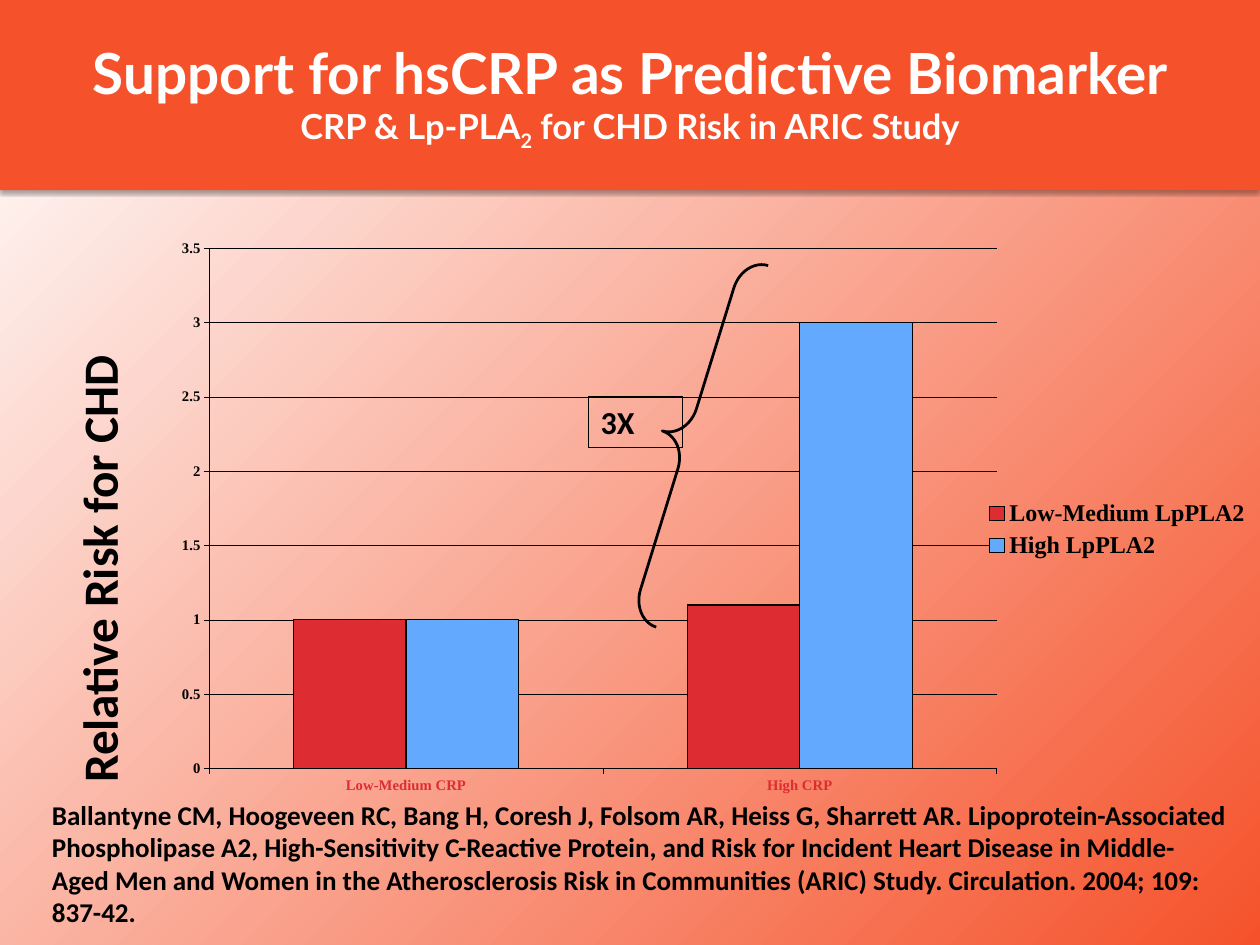
"""Build a slide on relative CHD risk by CRP and Lp-PLA2 level."""
from dataclasses import dataclass

from lxml import etree
from pptx import Presentation
from pptx.chart.data import CategoryChartData
from pptx.dml.color import RGBColor
from pptx.enum.chart import XL_CHART_TYPE as ChartType
from pptx.enum.chart import XL_LEGEND_POSITION as LegendPosition
from pptx.enum.chart import XL_TICK_LABEL_POSITION as LabelPosition
from pptx.enum.chart import XL_TICK_MARK as TickMark
from pptx.enum.shapes import MSO_SHAPE as Preset
from pptx.enum.text import MSO_ANCHOR as Anchor
from pptx.enum.text import MSO_AUTO_SIZE as AutoSize
from pptx.enum.text import PP_ALIGN as Align
from pptx.oxml import parse_xml
from pptx.oxml.ns import nsdecls, qn
from pptx.slide import Slide
from pptx.util import Cm, Pt

ORANGE = RGBColor(0xF5, 0x52, 0x2B)
RED = RGBColor(0xDD, 0x2D, 0x32)
BLUE = RGBColor(0x63, 0xAA, 0xFE)
BLACK = RGBColor(0, 0, 0)
WHITE = RGBColor(0xFF, 0xFF, 0xFF)

WIDTH, HEIGHT = 36.12, 27.09


@dataclass
class Box:
    left: float
    top: float
    width: float
    height: float

    def lengths(self) -> tuple:
        return tuple(Cm(v) for v in (self.left, self.top, self.width, self.height))


@dataclass
class Label:
    text: str
    box: Box
    size: float
    insets: tuple[float, float] = (0.36, 0.18)
    rotation: float = 0
    outline: float = 0


@dataclass
class RiskSeries:
    name: str
    values: tuple[float, ...]
    color: RGBColor


TITLE_BOX = Box(0, 0, WIDTH, 5.45)
CHART_BOX = Box(0, 5.71, WIDTH, 18.94)
BRACE_BOX = Box(18.95, 7.15, 1.5, 10.85)
TITLE_LINES = (
    (("Support for hsCRP as Predictive Biomarker", 46, False),),
    (("CRP & Lp-PLA", 28, False), ("2", 28, True), (" for CHD Risk in ARIC Study", 28, False)),
)
CATEGORIES = ("Low-Medium CRP", "High CRP")
SERIES = (
    RiskSeries("Low-Medium LpPLA2", (1, 1.1), RED),
    RiskSeries("High LpPLA2", (1, 3), BLUE),
)
PLOT_LAYOUT = {"x": 0.166, "y": 0.074, "w": 0.625, "h": 0.788}
AXIS_LABEL = Label("Relative Risk for CHD", Box(-4.55, 14.38, 14.76, 2.08), 40, rotation=270)
RATIO = Label("3X", Box(16.86, 11.37, 2.7, 1.46), 26, outline=0.75)
CITATION = Label(
    "Ballantyne CM, Hoogeveen RC, Bang H, Coresh J, Folsom AR, Heiss G, Sharrett AR. "
    "Lipoprotein-Associated Phospholipase A2, High-Sensitivity C-Reactive Protein, and Risk "
    "for Incident Heart Disease in Middle-Aged Men and Women in the Atherosclerosis Risk in "
    "Communities (ARIC) Study. Circulation. 2004; 109: 837-42.",
    Box(1.24, 22.75, 34.24, 4.01), 22, insets=(0.25, 0.13),
)


def apply(target, formats: dict) -> None:
    for name, value in formats.items():
        setattr(target, name, value)


def set_font(font, name: str, size: float, color: RGBColor) -> None:
    apply(font, {"name": name, "size": Pt(size), "bold": True})
    font.color.rgb = color


def set_line(line, width: float) -> None:
    line.color.rgb = BLACK
    line.width = Pt(width)


def paint_background(slide: Slide) -> None:
    fill = slide.background.fill
    fill.gradient()
    for stop, color, position in zip(fill.gradient_stops, (WHITE, ORANGE), (0, 1)):
        stop.color.rgb = color
        stop.position = position
    gradient = slide.element.find(".//" + qn("a:gradFill"))
    white = gradient.find(".//" + qn("a:srgbClr"))
    etree.SubElement(white, qn("a:alpha"), val="39000")
    gradient.remove(gradient.find(qn("a:lin")))
    circle = etree.SubElement(gradient, qn("a:path"), path="circle")
    etree.SubElement(circle, qn("a:fillToRect"), r="100000", b="100000")


def fill_title(slide: Slide) -> None:
    title = slide.shapes.title
    apply(title, dict(zip(("left", "top", "width", "height"), TITLE_BOX.lengths())))
    title.fill.solid()
    title.fill.fore_color.rgb = ORANGE
    title.element.spPr.append(parse_xml(
        f'<a:effectLst {nsdecls("a")}><a:outerShdw blurRad="39370" dist="22860" '
        'dir="5400000" rotWithShape="0"><a:srgbClr val="000000">'
        '<a:alpha val="35000"/></a:srgbClr></a:outerShdw></a:effectLst>'))
    frame = title.text_frame
    apply(frame, {"word_wrap": True, "auto_size": AutoSize.NONE,
                  "vertical_anchor": Anchor.MIDDLE})
    paragraph = frame.paragraphs[0]
    paragraph.alignment = Align.CENTER
    for index, line in enumerate(TITLE_LINES):
        if index:
            paragraph.add_line_break()
        for text, size, lowered in line:
            run = paragraph.add_run()
            run.text = text
            set_font(run.font, "Lato", size, WHITE)
            if lowered:
                run.font._element.set("baseline", "-25000")


def add_risk_chart(slide: Slide) -> None:
    data = CategoryChartData()
    data.categories = CATEGORIES
    for series in SERIES:
        data.add_series(series.name, series.values)
    chart = slide.shapes.add_chart(
        ChartType.COLUMN_CLUSTERED, *CHART_BOX.lengths(), data).chart
    apply(chart, {"has_title": False, "has_legend": True})
    set_font(chart.font, "Times New Roman", 11.1, BLACK)
    apply(chart.legend, {"position": LegendPosition.RIGHT, "include_in_layout": False})
    set_font(chart.legend.font, "Times New Roman", 19.5, BLACK)

    for axis, color in ((chart.category_axis, RED), (chart.value_axis, BLACK)):
        apply(axis, {"major_tick_mark": TickMark.OUTSIDE, "minor_tick_mark": TickMark.NONE})
        set_font(axis.tick_labels.font, "Times New Roman", 11.9, color)
        set_line(axis.format.line, 0.25)
    chart.category_axis.tick_label_position = LabelPosition.LOW
    apply(chart.value_axis, {"minimum_scale": 0, "maximum_scale": 3.5, "major_unit": 0.5,
                             "has_major_gridlines": True})
    set_line(chart.value_axis.major_gridlines.format.line, 0.25)

    plot = chart.plots[0]
    apply(plot, {"gap_width": 150, "overlap": 0, "vary_by_categories": False})
    for column, series in zip(plot.series, SERIES):
        column.format.fill.solid()
        column.format.fill.fore_color.rgb = series.color
        set_line(column.format.line, 1)

    area = chart.element.find(".//" + qn("c:plotArea"))
    for layout in area.findall(qn("c:layout")):
        area.remove(layout)
    modes = '<c:xMode val="edge"/><c:yMode val="edge"/>'
    sizes = "".join(f'<c:{key} val="{value}"/>' for key, value in PLOT_LAYOUT.items())
    area.insert(0, parse_xml(
        f'<c:layout {nsdecls("c")}><c:manualLayout><c:layoutTarget val="inner"/>'
        f"{modes}{sizes}</c:manualLayout></c:layout>"))


def add_label(slide: Slide, label: Label) -> None:
    shape = slide.shapes.add_textbox(*label.box.lengths())
    shape.rotation = label.rotation
    if label.outline:
        set_line(shape.line, label.outline)
    side, edge = (Cm(inset) for inset in label.insets)
    frame = shape.text_frame
    apply(frame, {"word_wrap": True, "auto_size": AutoSize.SHAPE_TO_FIT_TEXT,
                  "margin_left": side, "margin_right": side,
                  "margin_top": edge, "margin_bottom": edge})
    run = frame.paragraphs[0].add_run()
    run.text = label.text
    set_font(run.font, "Calibri", label.size, BLACK)


def add_brace(slide: Slide) -> None:
    brace = slide.shapes.add_shape(Preset.LEFT_BRACE, *BRACE_BOX.lengths())
    brace.shadow.inherit = False
    brace.rotation = 17.2
    brace.adjustments[0] = 0.6
    brace.fill.background()
    set_line(brace.line, 2.25)


def main() -> None:
    presentation = Presentation()
    apply(presentation, {"slide_width": Cm(WIDTH), "slide_height": Cm(HEIGHT)})
    slide = presentation.slides.add_slide(presentation.slide_layouts[5])
    paint_background(slide)
    fill_title(slide)
    add_risk_chart(slide)
    add_label(slide, AXIS_LABEL)
    add_brace(slide)
    add_label(slide, RATIO)
    add_label(slide, CITATION)
    presentation.save("out.pptx")


if __name__ == "__main__":
    main()
